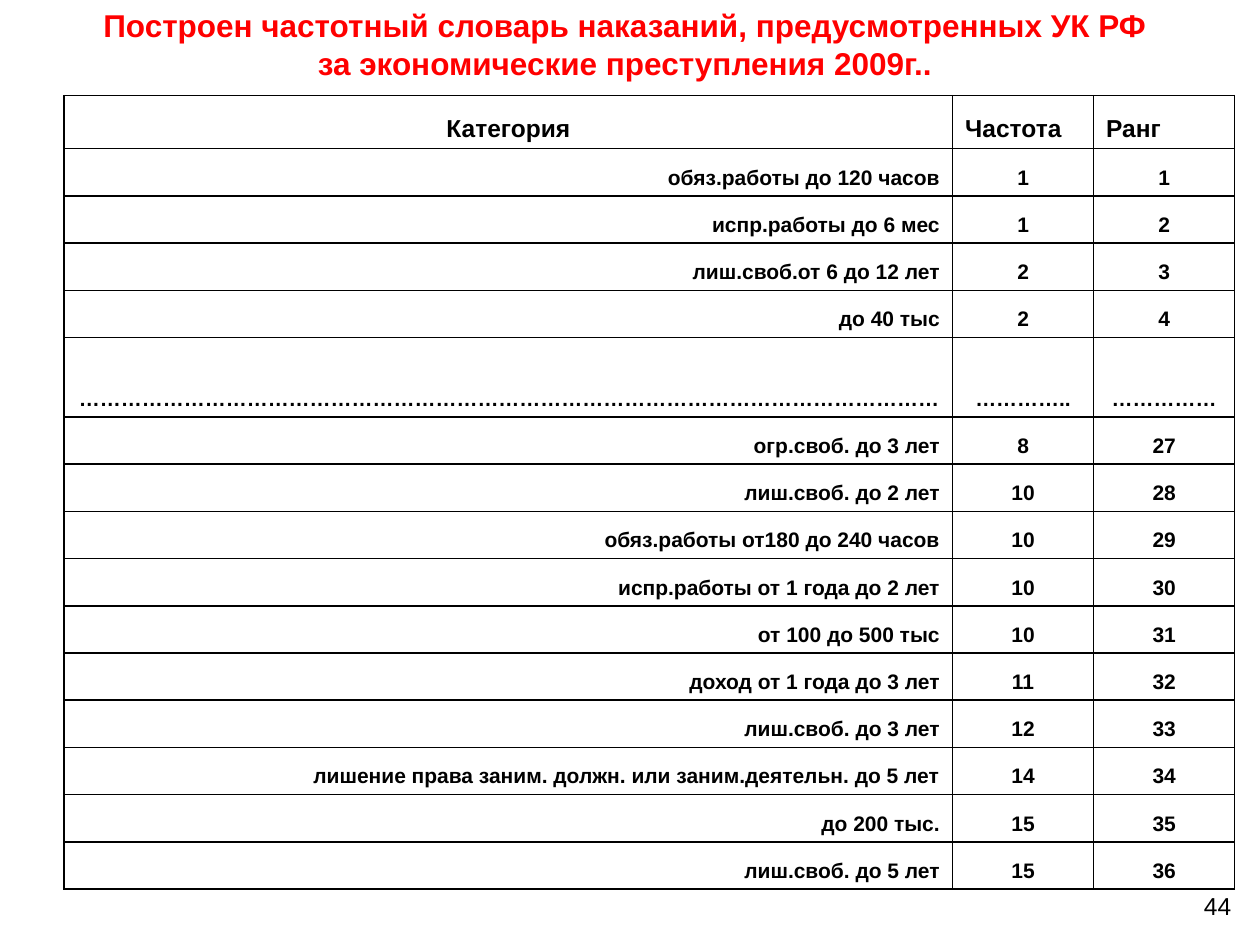
from lxml.etree import SubElement
from pptx import Presentation
from pptx.dml.color import RGBColor
from pptx.enum.text import MSO_ANCHOR as Anchor, MSO_AUTO_SIZE as AutoSize, PP_ALIGN as Align
from pptx.oxml.ns import qn
from pptx.util import Inches, Pt

TITLE = [
    "Построен частотный словарь наказаний, предусмотренных УК РФ",
    "за экономические преступления 2009г..",
]
HEADINGS = ("Категория", "Частота", "Ранг")
GAP = ("…" * 41, "…………..", "……………")
PENALTIES = [
    ("обяз.работы до 120 часов", "1", "1"),
    ("испр.работы до 6 мес", "1", "2"),
    ("лиш.своб.от 6 до 12 лет", "2", "3"),
    ("до 40 тыс", "2", "4"),
    ("……………………………………………………………………………………………………………", "…………..", "……………"),
    ("огр.своб. до 3 лет", "8", "27"),
    ("лиш.своб. до 2 лет", "10", "28"),
    ("обяз.работы от180 до 240 часов", "10", "29"),
    ("испр.работы от 1 года до 2 лет", "10", "30"),
    ("от 100 до 500 тыс", "10", "31"),
    ("доход от 1 года до 3 лет", "11", "32"),
    ("лиш.своб. до 3 лет", "12", "33"),
    ("лишение права заним. должн. или заним.деятельн. до 5 лет", "14", "34"),
    ("до 200 тыс.", "15", "35"),
    ("лиш.своб. до 5 лет", "15", "36"),
]
PAGE = "44"

COLUMN_WIDTHS = (7.05, 1.12, 1.12)
TABLE_HEIGHT, HEADING_HEIGHT, GAP_HEIGHT = 6.3, 0.42, 0.63
GAP_ROW = 5
INDENT = Inches(0.38)
HEADING_ALIGNS = (Align.CENTER, Align.LEFT, Align.LEFT)
PENALTY_ALIGNS = (Align.RIGHT, Align.CENTER, Align.CENTER)

TITLE_FONT = {"name": "Arial", "size": Pt(18), "bold": True}
HEADING_FONT = {"name": "Arial", "size": Pt(14), "bold": True}
PENALTY_FONT = {"name": "Arial", "size": Pt(12), "bold": True}
PAGE_FONT = {"name": "Arial", "size": Pt(14), "bold": False}


def paint(color_format, hex_color):
    color_format.rgb = RGBColor.from_string(hex_color)


def format_paragraph(paragraph, align, font, hex_color):
    paragraph.alignment = align
    for run in paragraph.runs:
        for attribute, value in font.items():
            setattr(run.font, attribute, value)
        paint(run.font.color, hex_color)


def place(shape, left, top, width, height):
    shape.left, shape.top = Inches(left), Inches(top)
    shape.width, shape.height = Inches(width), Inches(height)


def outline(cell):
    properties = cell._tc.get_or_add_tcPr()
    for side in ("a:lnL", "a:lnR", "a:lnT", "a:lnB"):
        line = SubElement(properties, qn(side), w=str(Pt(1)))
        SubElement(SubElement(line, qn("a:solidFill")), qn("a:srgbClr"), val="000000")


def fill_cell(cell, words, align, font):
    outline(cell)
    cell.fill.background()
    cell.vertical_anchor = Anchor.BOTTOM
    cell.text = words
    paragraph = cell.text_frame.paragraphs[0]
    properties = paragraph._p.get_or_add_pPr()
    properties.set("marL", str(INDENT))
    properties.set("indent", str(-INDENT))
    format_paragraph(paragraph, align, font, "000000")


def add_penalty_table(slide):
    rows = [HEADINGS, *PENALTIES]
    frame = slide.shapes.add_table(
        len(rows), len(HEADINGS), Inches(0.51), Inches(0.76),
        Inches(sum(COLUMN_WIDTHS)), Inches(TABLE_HEIGHT))
    table = frame.table
    table.first_row = table.horz_banding = False
    for column, width in zip(table.columns, COLUMN_WIDTHS):
        column.width = Inches(width)
    plain_height = (TABLE_HEIGHT - HEADING_HEIGHT - GAP_HEIGHT) / (len(rows) - 2)
    special_heights = {0: HEADING_HEIGHT, GAP_ROW: GAP_HEIGHT}
    for index, row in enumerate(rows):
        table.rows[index].height = Inches(special_heights.get(index, plain_height))
        aligns, font = (PENALTY_ALIGNS, PENALTY_FONT) if index else (HEADING_ALIGNS, HEADING_FONT)
        for cell, words, align in zip(table.rows[index].cells, row, aligns):
            fill_cell(cell, words, align, font)


def main():
    deck = Presentation()
    deck.slide_width, deck.slide_height = Inches(10), Inches(7.5)
    slide = deck.slides.add_slide(deck.slide_layouts[5])

    title = slide.shapes.title
    place(title, 0.43, 0, 9.06, 0.7)
    title.text_frame.text = "\n".join(TITLE)
    title.text_frame.auto_size = AutoSize.SHAPE_TO_FIT_TEXT
    title.text_frame.vertical_anchor = Anchor.TOP
    for paragraph in title.text_frame.paragraphs:
        format_paragraph(paragraph, Align.CENTER, TITLE_FONT, "FF0000")

    add_penalty_table(slide)

    page = slide.shapes.add_textbox(Inches(7.17), Inches(7.02), Inches(2.7), Inches(0.33))
    page.text_frame.word_wrap = True
    page.text_frame.text = PAGE
    format_paragraph(page.text_frame.paragraphs[0], Align.RIGHT, PAGE_FONT, "000000")

    deck.save("out.pptx")


if __name__ == "__main__":
    main()
